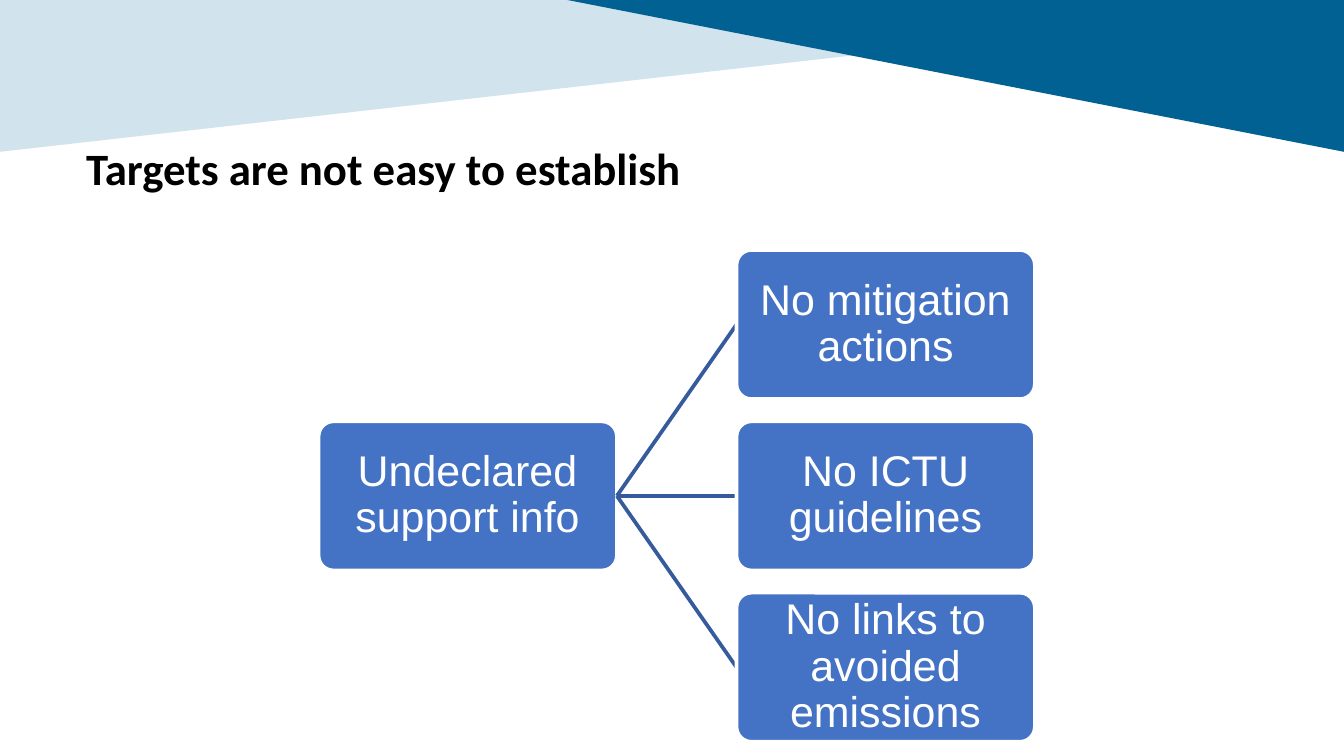
"""Build a slide with a banner, a title and a one-to-three tree diagram."""
from dataclasses import dataclass

from lxml.etree import SubElement
from pptx import Presentation
from pptx.dml.color import RGBColor
from pptx.enum.shapes import MSO_CONNECTOR, MSO_SHAPE
from pptx.enum.text import MSO_ANCHOR, MSO_AUTO_SIZE, PP_ALIGN
from pptx.oxml.ns import qn
from pptx.util import Inches, Pt


@dataclass(frozen=True)
class Theme:
    """Colours, fonts and sizes of the slide."""
    pale: RGBColor = RGBColor.from_string("D1E3EC")
    deep: RGBColor = RGBColor.from_string("006192")
    node: RGBColor = RGBColor.from_string("4472C4")
    branch: RGBColor = RGBColor.from_string("365B9D")
    white: RGBColor = RGBColor.from_string("FFFFFF")
    black: RGBColor = RGBColor.from_string("000000")
    title_font: str = "Calibri"
    node_font: str = "Arial"
    title_size: Pt = Pt(24)
    node_size: Pt = Pt(23)
    line_width: Pt = Pt(2)


THEME = Theme()


def set_attributes(target, values):
    """Set each named attribute of the target."""
    for name, value in values.items():
        setattr(target, name, value)


def set_text(shape, text, font, color, frame, paragraph_format):
    """Write one formatted paragraph into a shape."""
    text_frame = shape.text_frame
    text_frame.text = text
    set_attributes(text_frame, {"word_wrap": True, "auto_size": MSO_AUTO_SIZE.NONE, **frame})
    paragraph = text_frame.paragraphs[0]
    set_attributes(paragraph, paragraph_format)
    set_attributes(paragraph.font, font)
    paragraph.font.color.rgb = color


def add_triangle(slide, points, color):
    """Draw a filled triangle without an outline."""
    builder = slide.shapes.build_freeform(*points[0], scale=1.0)
    builder.add_line_segments(points[1:], close=True)
    shape = builder.convert_to_shape()
    shape.shadow.inherit = False
    shape.fill.solid()
    shape.fill.fore_color.rgb = color
    shape.line.fill.background()


def add_banner(slide, left, top, width, height):
    """Draw the two overlapping banner triangles."""
    right, bottom = left + width, top + height
    add_triangle(slide, [(left, top), (right, top), (left, bottom)], THEME.pale)
    add_triangle(slide, [(right, top), (left + Inches(4.22), top), (right, bottom)], THEME.deep)


def add_title(slide, text, left, top, width, height):
    """Move and format the title placeholder."""
    title = slide.shapes.title
    set_attributes(title, {"left": left, "top": top, "width": width, "height": height})
    set_text(
        title, text,
        {"name": THEME.title_font, "size": THEME.title_size, "bold": True}, THEME.black,
        {"vertical_anchor": MSO_ANCHOR.TOP,
         "margin_left": Inches(0.07), "margin_right": Inches(0.07),
         "margin_top": Inches(0.04), "margin_bottom": Inches(0.04)},
        {"alignment": PP_ALIGN.LEFT})


def add_node(slide, text, left, top, width, height):
    """Draw one rounded box with centred text."""
    shape = slide.shapes.add_shape(MSO_SHAPE.ROUNDED_RECTANGLE, left, top, width, height)
    shape.adjustments[0] = 0.1
    shape.shadow.inherit = False
    shape.fill.solid()
    shape.fill.fore_color.rgb = THEME.node
    shape.line.color.rgb = THEME.white
    shape.line.width = THEME.line_width
    margins = ("margin_left", "margin_right", "margin_top", "margin_bottom")
    set_text(
        shape, text,
        {"name": THEME.node_font, "size": THEME.node_size}, THEME.white,
        {"vertical_anchor": MSO_ANCHOR.MIDDLE, **dict.fromkeys(margins, Inches(0.04))},
        {"alignment": PP_ALIGN.CENTER, "line_spacing": 0.9})
    return shape


def add_branch(slide, parent):
    """Start a branch at the right side of the parent."""
    connector = slide.shapes.add_connector(MSO_CONNECTOR.STRAIGHT, 0, 0, 0, 0)
    connector.begin_connect(parent, 3)
    connector.line.color.rgb = THEME.branch
    connector.line.width = THEME.line_width
    SubElement(connector.element.spPr, qn("a:effectLst"))
    return connector


def add_tree(slide, root_text, child_texts, left, top, width, height):
    """Lay out a root box and its column of children in the given box."""
    node_width, node_height = Inches(2.22), Inches(1.11)
    child_left = left + width - node_width
    step = (height - node_height) // (len(child_texts) - 1)
    root_top = top + (height - node_height) // 2
    root = add_node(slide, root_text, left, root_top, node_width, node_height)
    for index, text in enumerate(child_texts):
        branch = add_branch(slide, root)
        child = add_node(slide, text, child_left, top + index * step, node_width, node_height)
        branch.end_connect(child, 1)


def main():
    """Build and save the presentation."""
    presentation = Presentation()
    slide_width = Inches(10)
    set_attributes(presentation, {"slide_width": slide_width, "slide_height": slide_width * 9 // 16})
    slide = presentation.slides.add_slide(presentation.slide_layouts[5])
    add_banner(slide, 0, 0, slide_width, Inches(1.13))
    add_title(slide, "Targets are not easy to establish",
              Inches(0.57), Inches(1.01), Inches(6.19), Inches(0.48))
    add_tree(slide, "Undeclared support info",
             ["No mitigation actions", "No ICTU guidelines", "No links to avoided emissions"],
             Inches(2.37), Inches(1.86), Inches(5.33), Inches(3.66))
    presentation.save("out.pptx")


if __name__ == "__main__":
    main()
